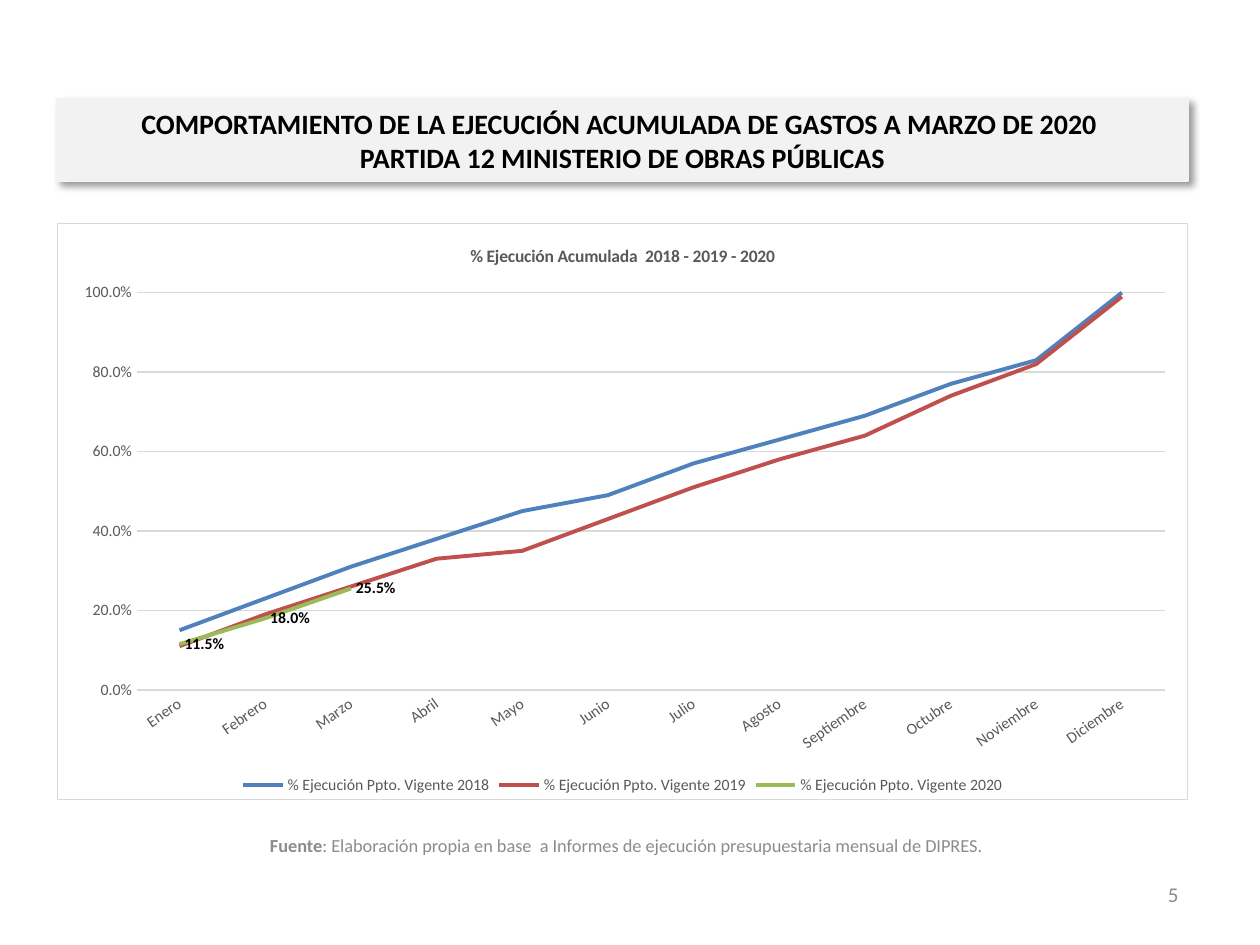
from dataclasses import dataclass

from lxml import etree
from pptx import Presentation
from pptx.chart.data import CategoryChartData
from pptx.dml.color import RGBColor
from pptx.enum.chart import XL_CHART_TYPE, XL_LABEL_POSITION, XL_LEGEND_POSITION, XL_TICK_MARK
from pptx.enum.shapes import MSO_SHAPE
from pptx.enum.text import MSO_ANCHOR, MSO_AUTO_SIZE, PP_ALIGN
from pptx.oxml import parse_xml
from pptx.oxml.ns import qn
from pptx.util import Pt

PX = 914400 / 126
LINE = XL_CHART_TYPE.LINE
LABEL_RIGHT = XL_LABEL_POSITION.RIGHT
LEGEND_BOTTOM = XL_LEGEND_POSITION.BOTTOM
NO_TICK = XL_TICK_MARK.NONE
RECTANGLE = MSO_SHAPE.RECTANGLE
MIDDLE = MSO_ANCHOR.MIDDLE
FIT_SHAPE = MSO_AUTO_SIZE.SHAPE_TO_FIT_TEXT
CENTER, RIGHT = PP_ALIGN.CENTER, PP_ALIGN.RIGHT
DRAWING_NS = "http://schemas.openxmlformats.org/drawingml/2006/main"
CHART_NS = "http://schemas.openxmlformats.org/drawingml/2006/chart"
PERCENT = "0.0%"

MONTHS = ["Enero", "Febrero", "Marzo", "Abril", "Mayo", "Junio", "Julio", "Agosto",
          "Septiembre", "Octubre", "Noviembre", "Diciembre"]
EXECUTION = {
    2018: [0.15, 0.23, 0.31, 0.38, 0.45, 0.49, 0.57, 0.63, 0.69, 0.77, 0.83, 1],
    2019: [0.11, 0.19, 0.26, 0.33, 0.35, 0.43, 0.51, 0.58, 0.64, 0.74, 0.82, 0.99],
    2020: [0.115, 0.18, 0.255],
}
PLOT_AREA = {"x": 0.07, "y": 0.12, "w": 0.91, "h": 0.69}


@dataclass(frozen=True)
class Theme:
    """Colours, font and type sizes of the slide."""
    font: str = "Calibri"
    ink: str = "000000"
    axis_ink: str = "595959"
    muted: str = "8C8C8C"
    banner: str = "F2F2F2"
    paper: str = "FFFFFF"
    rule: str = "D9D9D9"
    years: tuple = ("4F81BD", "C0504D", "9BBB59")
    heading: float = 16
    number: float = 12
    source: float = 10.5
    chart: float = 10
    label: float = 9


THEME = Theme()


def px(*lengths):
    """Turn pixel lengths into EMU."""
    return [round(length * PX) for length in lengths]


def apply(target, **values):
    """Set each named format value on the target."""
    for name, value in values.items():
        setattr(target, name, value)


def style_font(font, size, color, bold=False):
    """Set the theme font with a size, colour and weight."""
    apply(font, name=THEME.font, size=Pt(size), bold=bold)
    font.color.rgb = RGBColor.from_string(color)


def style_line(line, color, width):
    """Give a line a solid colour and a width in points."""
    line.color.rgb = RGBColor.from_string(color)
    line.width = Pt(width)


def write_runs(frame, runs, size, color, align):
    """Write runs of (text, bold) into the first paragraph, None being a line break."""
    apply(frame, word_wrap=True, vertical_anchor=MIDDLE)
    paragraph = frame.paragraphs[0]
    paragraph.alignment = align
    for run_values in runs:
        if run_values is None:
            paragraph.add_line_break()
            continue
        text, bold = run_values
        run = paragraph.add_run()
        run.text = text
        style_font(run.font, size, color, bold)


def add_note(slide, box, runs, size, align):
    """Add a muted line of text."""
    note = slide.shapes.add_textbox(*px(*box))
    write_runs(note.text_frame, runs, size, THEME.muted, align)


def add_banner(slide, box, runs):
    """Add the heading band with its soft shadow."""
    banner = slide.shapes.add_shape(RECTANGLE, *px(*box))
    banner.fill.solid()
    banner.fill.fore_color.rgb = RGBColor.from_string(THEME.banner)
    style_line(banner.line, THEME.banner, 0.75)
    banner.shadow.inherit = False
    effects = banner._element.spPr.find(qn("a:effectLst"))
    effects.append(parse_xml(
        f'<a:outerShdw xmlns:a="{DRAWING_NS}" blurRad="{Pt(4)}" dist="{Pt(3)}" '
        f'dir="2700000" algn="tl" rotWithShape="0"><a:srgbClr val="{THEME.ink}">'
        '<a:alpha val="40000"/></a:srgbClr></a:outerShdw>'))
    write_runs(banner.text_frame, runs, THEME.heading, THEME.ink, CENTER)
    banner.text_frame.auto_size = FIT_SHAPE


def frame_chart(chart):
    """Fill and outline the chart and fix its plot area."""
    space = chart._chartSpace
    space.find(qn("c:chart")).addnext(parse_xml(
        f'<c:spPr xmlns:c="{CHART_NS}" xmlns:a="{DRAWING_NS}">'
        f'<a:solidFill><a:srgbClr val="{THEME.paper}"/></a:solidFill>'
        f'<a:ln w="{Pt(0.75)}"><a:solidFill><a:srgbClr val="{THEME.rule}"/></a:solidFill>'
        '</a:ln></c:spPr>'))
    plot_area = space.find(".//" + qn("c:plotArea"))
    for automatic in plot_area.findall(qn("c:layout")):
        plot_area.remove(automatic)
    layout = etree.Element(qn("c:layout"))
    manual = etree.SubElement(layout, qn("c:manualLayout"))
    modes = {"layoutTarget": "inner", "xMode": "edge", "yMode": "edge"}
    for name, value in {**modes, **PLOT_AREA}.items():
        etree.SubElement(manual, qn(f"c:{name}"), val=str(value))
    plot_area.insert(0, layout)


def style_axes(chart):
    """Format the month axis and the percentage axis."""
    months, shares = chart.category_axis, chart.value_axis
    for axis in (months, shares):
        apply(axis, major_tick_mark=NO_TICK, minor_tick_mark=NO_TICK)
        style_font(axis.tick_labels.font, THEME.label, THEME.axis_ink)
    style_line(months.format.line, THEME.rule, 1)
    months._element.find(".//" + qn("a:bodyPr")).set("rot", "-2100000")
    apply(shares, minimum_scale=0, maximum_scale=1, major_unit=0.2, has_major_gridlines=True)
    apply(shares.tick_labels, number_format=PERCENT, number_format_is_linked=False)
    shares.format.line.fill.background()
    style_line(shares.major_gridlines.format.line, THEME.rule, 0.75)


def add_execution_chart(slide, box, title):
    """Add the line chart of accumulated execution by year."""
    data = CategoryChartData(number_format=PERCENT)
    data.categories = MONTHS
    for year, shares in EXECUTION.items():
        missing = [None] * (len(MONTHS) - len(shares))
        data.add_series(f"% Ejecución Ppto. Vigente {year}", shares + missing)
    chart = slide.shapes.add_chart(LINE, *px(*box), data).chart
    style_font(chart.font, THEME.chart, THEME.ink)
    chart.has_title = True
    heading = chart.chart_title.text_frame.paragraphs[0].add_run()
    heading.text = title
    style_font(heading.font, THEME.chart, THEME.axis_ink, True)
    chart.has_legend = True
    apply(chart.legend, position=LEGEND_BOTTOM, include_in_layout=False)
    style_font(chart.legend.font, THEME.label, THEME.axis_ink)
    plot = chart.plots[0]
    plot.vary_by_categories = False
    for series, color in zip(plot.series, THEME.years):
        series.smooth = False
        style_line(series.format.line, color, 2.25)
    labels = plot.series[-1].data_labels
    apply(labels, show_value=True, number_format=PERCENT,
          number_format_is_linked=False, position=LABEL_RIGHT)
    style_font(labels.font, THEME.label, THEME.ink, True)
    style_axes(chart)
    frame_chart(chart)


def main():
    """Build and save the slide."""
    deck = Presentation()
    deck.slide_width, deck.slide_height = px(1260, 945)
    slide = deck.slides.add_slide(deck.slide_layouts[6])
    add_note(slide, (77, 820, 1099, 50), [
        ("Fuente", True),
        (": Elaboración propia en base  a Informes de ejecución presupuestaria mensual de DIPRES.",
         False)], THEME.source, CENTER)
    add_note(slide, (897, 869, 294, 50), [("5", False)], THEME.number, RIGHT)
    add_banner(slide, (57, 99, 1131, 82), [
        ("COMPORTAMIENTO DE LA EJECUCIÓN ACUMULADA DE GASTOS A MARZO DE 2020 ", True),
        None,
        ("PARTIDA 12 MINISTERIO DE OBRAS PÚBLICAS", True)])
    add_execution_chart(slide, (57, 223, 1131, 577), "% Ejecución Acumulada  2018 - 2019 - 2020")
    deck.save("out.pptx")


if __name__ == "__main__":
    main()
